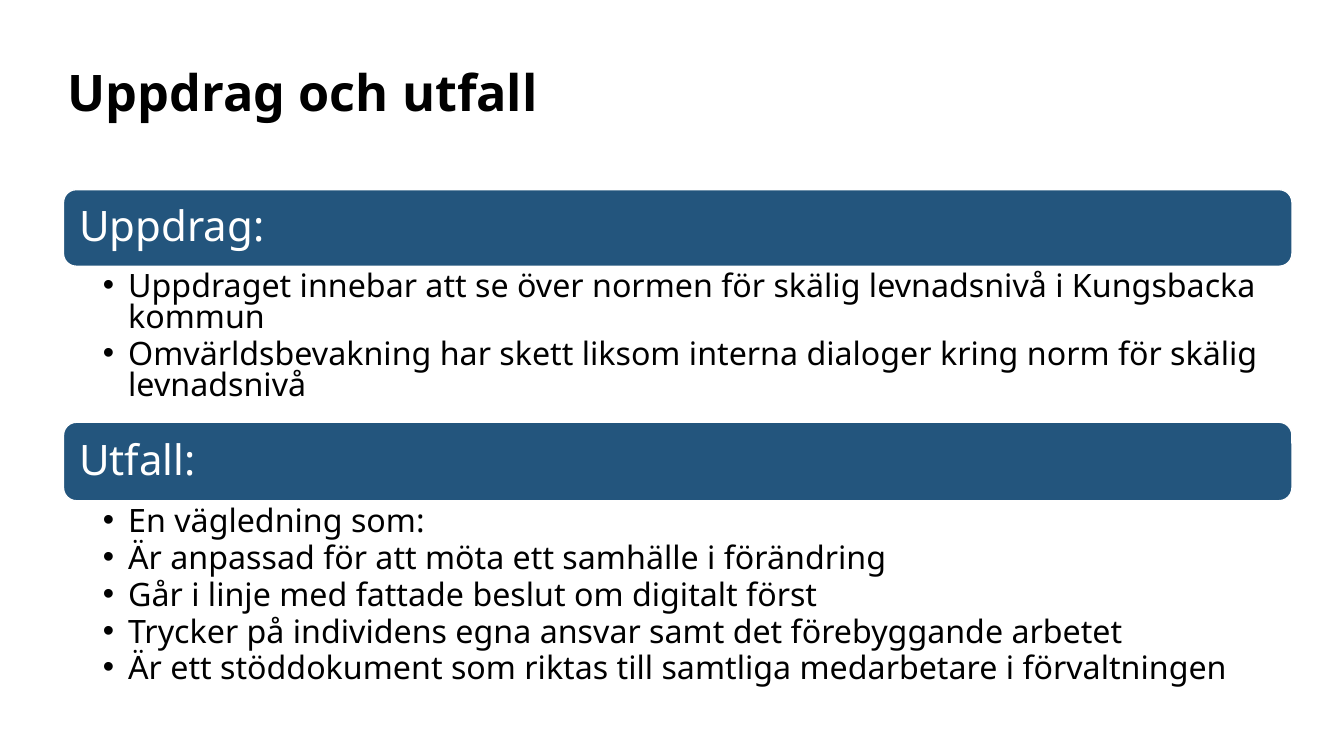
import pptx
import pptx.dml.color
import pptx.enum.shapes
import pptx.enum.text
import pptx.util

Cm = pptx.util.Cm
Pt = pptx.util.Pt
RGBColor = pptx.dml.color.RGBColor
ANCHOR = pptx.enum.text.MSO_ANCHOR

BLUE = RGBColor(0x23, 0x55, 0x7D)
WHITE = RGBColor(0xFF, 0xFF, 0xFF)
BLACK = RGBColor(0x00, 0x00, 0x00)

FONT = "Noto Sans"
LEFT, TOP, WIDTH = Cm(1.6), Cm(4.78), Cm(30.96)

TITLE_FONT = {"name": FONT, "size": Pt(36), "bold": True}
BAR_FONT = {"name": FONT, "size": Pt(30)}
LIST_FONT = {"name": FONT, "size": Pt(23)}

HEADING = {"alignment": pptx.enum.text.PP_ALIGN.LEFT, "line_spacing": 0.9}
ITEM = {"line_spacing": 0.8, "space_before": Pt(0), "space_after": Pt(4.3)}

BAR_FRAME = {
    "vertical_anchor": ANCHOR.MIDDLE, "word_wrap": True,
    "margin_left": Cm(0.3), "margin_right": Cm(0.3),
    "margin_top": Cm(0.3), "margin_bottom": Cm(0.3),
}
LIST_FRAME = {
    "vertical_anchor": ANCHOR.TOP, "word_wrap": True,
    "auto_size": pptx.enum.text.MSO_AUTO_SIZE.NONE,
    "margin_left": Cm(0.99), "margin_right": Cm(0.58),
    "margin_top": Cm(0.17), "margin_bottom": Cm(0.1),
}
TITLE_FRAME = {
    "vertical_anchor": ANCHOR.MIDDLE,
    "auto_size": pptx.enum.text.MSO_AUTO_SIZE.NONE,
}

SECTIONS = [
    ("Uppdrag:", Cm(1.93), Cm(3.93), [
        "Uppdraget innebar att se över normen för skälig levnadsnivå i Kungsbacka kommun",
        "Omvärldsbevakning har skett liksom interna dialoger kring norm för skälig levnadsnivå",
    ]),
    ("Utfall:", Cm(1.98), Cm(5.44), [
        "En vägledning som:",
        "Är anpassad för att möta ett samhälle i förändring",
        "Går i linje med fattade beslut om digitalt först",
        "Trycker på individens egna ansvar samt det förebyggande arbetet",
        "Är ett stöddokument som riktas till samtliga medarbetare i förvaltningen",
    ]),
]


def apply(obj, values):
    for name, value in values.items():
        setattr(obj, name, value)


def place(sp, left, top, width, height):
    apply(sp, {"left": left, "top": top, "width": width, "height": height})


def write(tf, lines, frame, para, font, color):
    apply(tf, frame)
    tf.text = "\n".join(lines)
    for p in tf.paragraphs:
        apply(p, para)
        apply(p.runs[0].font, font)
        p.runs[0].font.color.rgb = color


def add_bar(s, text, top, height):
    sp = s.shapes.add_shape(
        pptx.enum.shapes.MSO_SHAPE.ROUNDED_RECTANGLE, LEFT, top, WIDTH, height)
    sp.shadow.inherit = False
    sp.fill.solid()
    sp.fill.fore_color.rgb = BLUE
    sp.line.color.rgb = WHITE
    sp.line.width = Pt(1)
    write(sp.text_frame, [text], BAR_FRAME, HEADING, BAR_FONT, WHITE)


def fill_list(sp, items, top, height):
    place(sp, LEFT, top, WIDTH, height)
    write(sp.text_frame, items, LIST_FRAME, ITEM, LIST_FONT, BLACK)
    for p in sp.text_frame.paragraphs:
        pPr = p._p.get_or_add_pPr()
        pPr.set("marL", str(Cm(0.64)))
        pPr.set("indent", str(-Cm(0.64)))


def main():
    prs = pptx.Presentation()
    prs.slide_width, prs.slide_height = Cm(33.87), Cm(19.05)
    s = prs.slides.add_slide(prs.slide_layouts.get_by_name("Two Content"))

    title = s.shapes.title
    place(title, Cm(1.45), Cm(1.3), Cm(27.76), Cm(2.21))
    write(title.text_frame, ["Uppdrag och utfall"], TITLE_FRAME, HEADING, TITLE_FONT, BLACK)

    top = TOP
    bodies = list(s.placeholders)[1:]
    for sp, (heading, bar_height, list_height, items) in zip(bodies, SECTIONS):
        add_bar(s, heading, top, bar_height)
        fill_list(sp, items, top + bar_height, list_height)
        top += bar_height + list_height

    prs.save("out.pptx")


if __name__ == "__main__":
    main()
